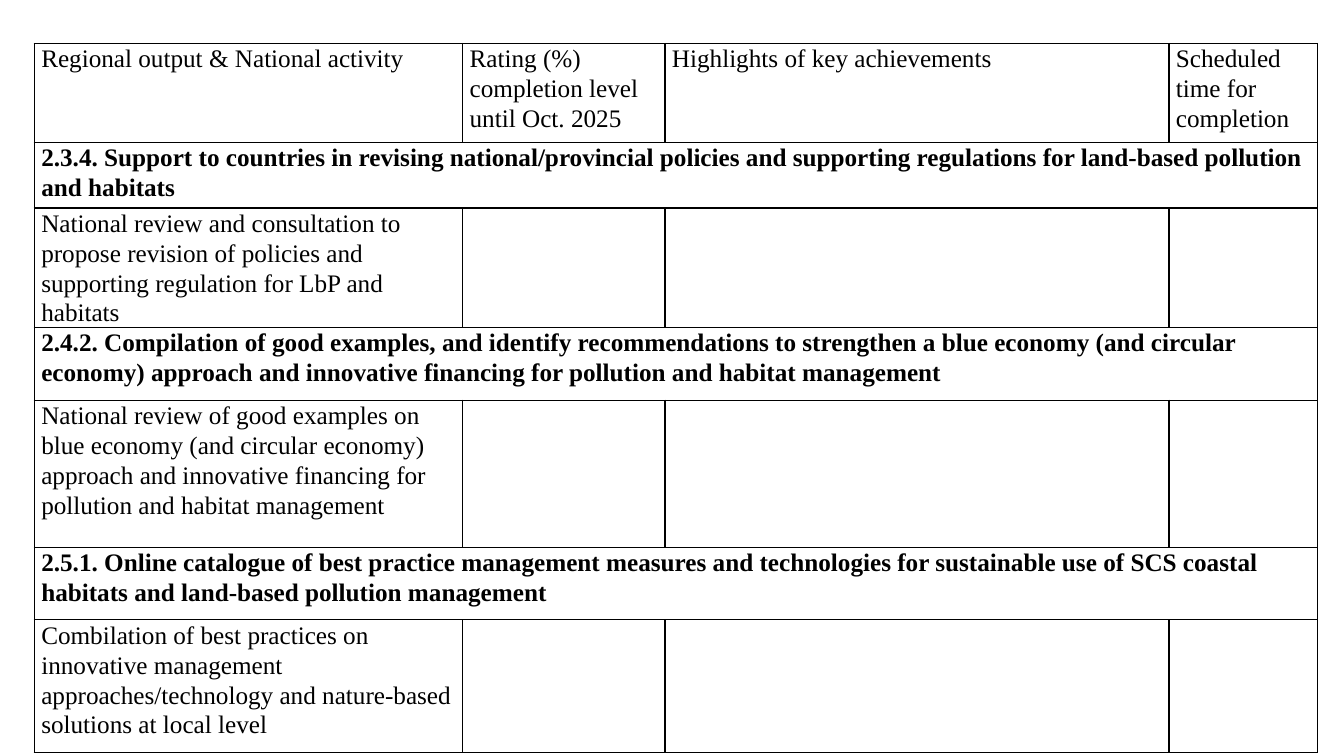
from lxml import etree
from pptx import Presentation
from pptx.dml.color import RGBColor
from pptx.oxml.ns import qn
from pptx.util import Pt

BLANK = 6
FONT = "Times New Roman"
INK = "000000"
COL_WIDTHS = [306, 144.5, 360, 106]
ROW_HEIGHTS = [70.5, 47, 78.5, 52, 105, 52, 95]
HEADERS = [
    "Regional output & National activity",
    "Rating (%) completion level until Oct. 2025",
    "Highlights of key achievements",
    "Scheduled time for completion",
]
ACTIVITIES = [
    ("2.3.4. Support to countries in revising national/provincial policies and "
     "supporting regulations for land-based pollution and habitats",
     "National review and consultation to propose revision of policies and "
     "supporting regulation for LbP and habitats"),
    ("2.4.2. Compilation of good examples, and identify recommendations to "
     "strengthen a blue economy (and circular economy) approach and innovative "
     "financing for pollution and habitat management",
     "National review of good examples on blue economy (and circular economy) "
     "approach and innovative financing for pollution and habitat management"),
    ("2.5.1. Online catalogue of best practice management measures and technologies "
     "for sustainable use of SCS coastal habitats and land-based pollution management",
     "Combilation of best practices on innovative management "
     "approaches/technology and nature-based solutions at local level"),
]


def write_cell(cell, text, bold=False):
    cell.text_frame.text = text
    p = cell.text_frame.paragraphs[0]
    p.line_spacing = 1.07
    p.space_after = Pt(8)
    r = p.runs[0]
    r.font.name = FONT
    r.font.size = Pt(18)
    r.font.bold = bold
    r.font.color.rgb = RGBColor.from_string(INK)


def style_cell(cell):
    cell.margin_left = cell.margin_right = Pt(5)
    cell.margin_top = cell.margin_bottom = 0
    tcPr = cell._tc.get_or_add_tcPr()
    for side in ("a:lnL", "a:lnR", "a:lnT", "a:lnB"):
        ln = etree.SubElement(tcPr, qn(side), w=str(Pt(1)))
        fill = etree.SubElement(ln, qn("a:solidFill"))
        etree.SubElement(fill, qn("a:srgbClr"), val=INK)
    cell.fill.background()


prs = Presentation()
prs.slide_width = Pt(960)
prs.slide_height = Pt(540)
s = prs.slides.add_slide(prs.slide_layouts[BLANK])

table = s.shapes.add_table(
    len(ROW_HEIGHTS), len(COL_WIDTHS),
    Pt(24.5), Pt(31), Pt(sum(COL_WIDTHS)), Pt(sum(ROW_HEIGHTS)),
).table
table.first_row = False
table.horz_banding = False
for column, width in zip(table.columns, COL_WIDTHS):
    column.width = Pt(width)
for row, height in zip(table.rows, ROW_HEIGHTS):
    row.height = Pt(height)
for cell in table.iter_cells():
    style_cell(cell)

for col, header in enumerate(HEADERS):
    write_cell(table.cell(0, col), header)
for i, (output, activity) in enumerate(ACTIVITIES):
    row = 1 + 2 * i
    table.cell(row, 0).merge(table.cell(row, len(COL_WIDTHS) - 1))
    write_cell(table.cell(row, 0), output, bold=True)
    write_cell(table.cell(row + 1, 0), activity)

prs.save("out.pptx")
